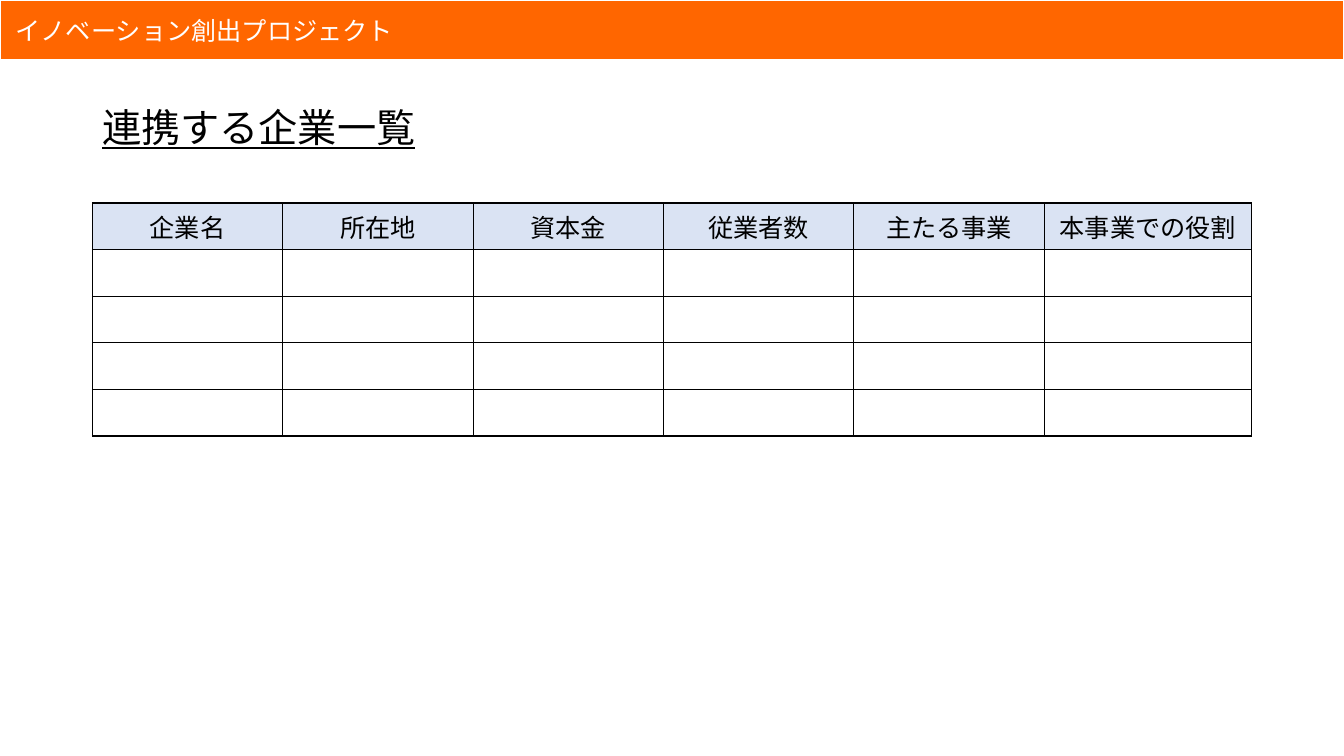
"""Build the slide that lists the partner companies."""
from dataclasses import dataclass

from lxml import etree
from pptx import Presentation
from pptx.dml.color import RGBColor
from pptx.enum.shapes import MSO_SHAPE
from pptx.enum.text import MSO_ANCHOR, PP_ALIGN
from pptx.oxml.ns import qn
from pptx.util import Pt

RECT = MSO_SHAPE.RECTANGLE
MIDDLE = MSO_ANCHOR.MIDDLE
LEFT, CENTER = PP_ALIGN.LEFT, PP_ALIGN.CENTER


@dataclass(frozen=True)
class Theme:
    font: str = "Noto Sans CJK JP"
    orange: RGBColor = RGBColor(0xFF, 0x66, 0x00)
    pale: RGBColor = RGBColor(0xDA, 0xE3, 0xF3)
    white: RGBColor = RGBColor(0xFF, 0xFF, 0xFF)
    black: RGBColor = RGBColor(0x00, 0x00, 0x00)
    title: Pt = Pt(28)
    body: Pt = Pt(18)


theme = Theme()


def write(frame, text, size, color, align):
    """Set one line of text and return its paragraph."""
    frame.text = text
    line = frame.paragraphs[0]
    line.alignment = align
    for run in line.runs:
        run.font.size = size
        run.font.name = theme.font
        run.font.color.rgb = color
        east = etree.SubElement(run.font._element, qn("a:ea"))
        east.set("typeface", theme.font)
    return line


def frame_cell(cell):
    """Draw a thin black border on all sides of a cell."""
    props = cell._tc.get_or_add_tcPr()
    for spot, side in enumerate(("a:lnL", "a:lnR", "a:lnT", "a:lnB")):
        edge = etree.Element(qn(side), w=str(Pt(1)))
        fill = etree.SubElement(edge, qn("a:solidFill"))
        etree.SubElement(fill, qn("a:srgbClr"), val=str(theme.black))
        props.insert(spot, edge)


deck = Presentation()
deck.slide_width, deck.slide_height = Pt(960), Pt(540)
slide = deck.slides.add_slide(deck.slide_layouts[6])

band = slide.shapes.add_shape(RECT, Pt(0), Pt(0), Pt(960), Pt(43))
band.shadow.inherit = False
band.fill.solid()
band.fill.fore_color.rgb = theme.orange
band.line.color.rgb = theme.white
band.line.width = Pt(1.5)
band.text_frame.vertical_anchor = MIDDLE
write(band.text_frame, " イノベーション創出プロジェクト", theme.body, theme.white, LEFT)

title = slide.shapes.add_textbox(Pt(66), Pt(53), Pt(828), Pt(79))
title.text_frame.word_wrap = True
title.text_frame.vertical_anchor = MIDDLE
line = write(title.text_frame, "連携する企業一覧", theme.title, theme.black, LEFT)
line.line_spacing = 0.9
line.runs[0].font.underline = True

heads = ["企業名", "所在地", "資本金", "従業者数", "主たる事業", "本事業での役割"]
widths = [136] * 5 + [148]
count, high = 5, 33.3
grid = slide.shapes.add_table(
    count, len(heads), Pt(66), Pt(145), Pt(sum(widths)), Pt(count * high)
).table
for col, width in zip(grid.columns, widths):
    col.width = Pt(width)
for r, row in enumerate(grid.rows):
    row.height = Pt(high)
    for c, cell in enumerate(row.cells):
        if r == 0:
            write(cell.text_frame, heads[c], theme.body, theme.black, CENTER)
            cell.fill.solid()
            cell.fill.fore_color.rgb = theme.pale
        else:
            cell.fill.background()
        frame_cell(cell)
for c, cell in enumerate(grid.rows[0].cells):
    cell.text_frame.paragraphs[0].runs[0].font.bold = False

deck.save("out.pptx")
